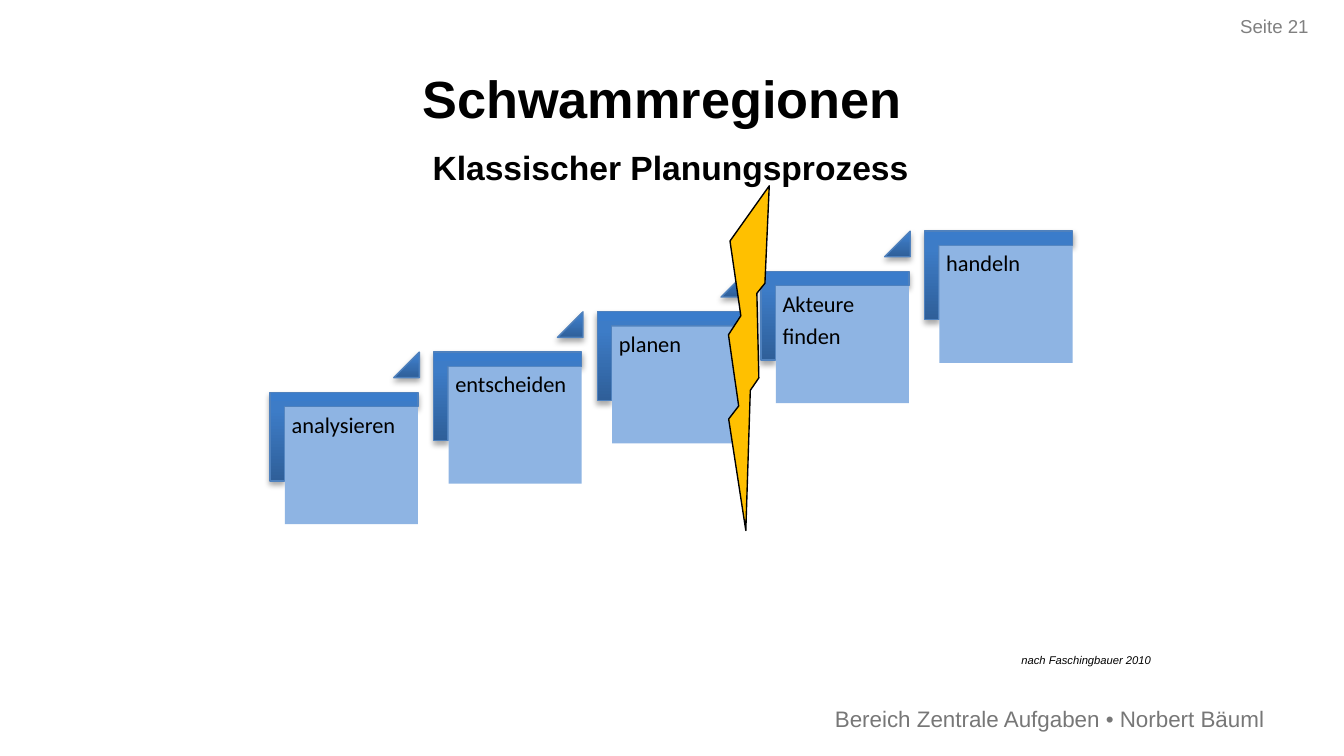
import pptx
import pptx.util
import pptx.oxml
import pptx.dml.color
import pptx.enum.shapes
import pptx.enum.text

Inches = pptx.util.Inches
Pt = pptx.util.Pt
KINDS = pptx.enum.shapes.MSO_SHAPE
ALIGN = pptx.enum.text.PP_ALIGN
NS = "http://schemas.openxmlformats.org/drawingml/2006/main"

colors = {
    "black": "000000", "white": "FFFFFF", "foot": "777777", "page": "808080",
    "box": "8EB4E3", "edge": "4F81BD", "bolt": "FFC000",
    "dark": "2F5F99", "mid": "3D7CC7", "light": "3A7CCB",
}

grad = f'<a:gradFill xmlns:a="{NS}" rotWithShape="0"><a:gsLst>'
for pos, name in ((0, "dark"), (80, "mid"), (100, "light")):
    grad += f'<a:gs pos="{pos * 1000}"><a:srgbClr val="{colors[name]}"/></a:gs>'
grad += '</a:gsLst><a:lin ang="16200000" scaled="0"/></a:gradFill>'

shade = (f'<a:outerShdw xmlns:a="{NS}" blurRad="40000" dist="23000" dir="5400000" '
         f'rotWithShape="0"><a:srgbClr val="{colors["black"]}">'
         '<a:alpha val="35000"/></a:srgbClr></a:outerShdw>')


def draw(kind, x, y, w, h, fill=None, line=None, turn=0):
    """Add a preset shape; without a fill colour it gets the blue gradient and shadow."""
    shape = slide.shapes.add_shape(kind, Inches(x), Inches(y), Inches(w), Inches(h))
    shape.rotation = turn
    shape.shadow.inherit = False
    if line:
        shape.line.color.rgb = pptx.dml.color.RGBColor.from_string(colors[line])
        shape.line.width = Pt(0.75)
    else:
        shape.line.fill.background()
    if fill:
        shape.fill.solid()
        shape.fill.fore_color.rgb = pptx.dml.color.RGBColor.from_string(colors[fill])
    else:
        shape.fill.gradient()
        props = shape.element.spPr
        old = props.find(f"{{{NS}}}gradFill")
        props.replace(old, pptx.oxml.parse_xml(grad))
        props.find(f"{{{NS}}}effectLst").append(pptx.oxml.parse_xml(shade))
    return shape


def write(shape, lines, size, color="black", font="Arial", pads=(0.1, 0.05, 0.1, 0.05),
          align=ALIGN.LEFT, lead=1, after=0, bold=False, slant=False, wrap=True):
    """Fill a shape with one paragraph per line; pads are left, top, right, bottom."""
    frame = shape.text_frame
    frame.word_wrap = wrap
    frame.vertical_anchor = pptx.enum.text.MSO_ANCHOR.TOP
    frame.margin_left, frame.margin_top, frame.margin_right, frame.margin_bottom = map(Inches, pads)
    for i, text in enumerate(lines):
        para = frame.add_paragraph() if i else frame.paragraphs[0]
        para.alignment = align
        para.line_spacing = lead
        para.space_after = Pt(after)
        run = para.add_run()
        run.text = text
        run.font.name = font
        run.font.size = Pt(size)
        run.font.bold = bold
        run.font.italic = slant
        run.font.color.rgb = pptx.dml.color.RGBColor.from_string(colors[color])


deck = pptx.Presentation()
deck.slide_width = Inches(10)
deck.slide_height = deck.slide_width * 9 // 16
slide = deck.slides.add_slide(deck.slide_layouts[6])

# Staircase: each step is a corner, a box with its label and a triangle leading upwards
steps = [["analysieren"], ["entscheiden"], ["planen"], ["Akteure", "finden"], ["handeln"]]
rise = 1.2 / (len(steps) - 1)
stride = 4.87 / (len(steps) - 1)
for i, words in enumerate(steps):
    x = 2.12 + stride * i
    y = 3.03 - rise * i
    corner = draw(KINDS.CORNER, x + 0.11, y - 0.33, 0.66, 1.1, line="edge", turn=90)
    corner.adjustments[0] = corner.adjustments[1] = 0.16
    place = (x, y, 0.99, 0.87)
    draw(KINDS.RECTANGLE, *place, "box")
    label = slide.shapes.add_textbox(*map(Inches, place))
    write(label, words, 12, font="Calibri", pads=[0.05] * 4, lead=0.9, after=4.2)
    if i < len(steps) - 1:
        arrow = draw(KINDS.ISOSCELES_TRIANGLE, x + 0.81, y - 0.41, 0.19, 0.19, line="edge")
        arrow.adjustments[0] = 1

credit = draw(KINDS.RECTANGLE, 7.53, 4.79, 1, 0.23, "white")
write(credit, ["nach Faschingbauer 2010"], 6, pads=(0.07, 0.04, 0.07, 0.04),
      lead=1.3, slant=True, wrap=False)

draw(KINDS.LIGHTNING_BOLT, 5.27, 1.37, 0.53, 2.55, "bolt", "black", 11.1)

# Headings, footer and page number
head = dict(pads=(0.07, 0.03, 0.07, 0.03), align=ALIGN.CENTER, lead=1.01, bold=True)
labels = [
    ((-0.01, 1.06, 10, 0.36), "Klassischer Planungsprozess", 18, head),
    ((1.25, 0.46, 7.35, 0.52), "Schwammregionen", 28, head),
    ((4.17, 5.2, 5.32, 0.3), "Bereich Zentrale Aufgaben • Norbert Bäuml", 12,
     dict(color="foot", pads=(0.1, 0.05, 0.08, 0.05), align=ALIGN.RIGHT)),
    ((9.13, 0.06, 0.87, 0.27), "Seite 21", 10, dict(color="page")),
]
for place, text, size, style in labels:
    write(slide.shapes.add_textbox(*map(Inches, place)), [text], size, **style)

deck.save("out.pptx")
